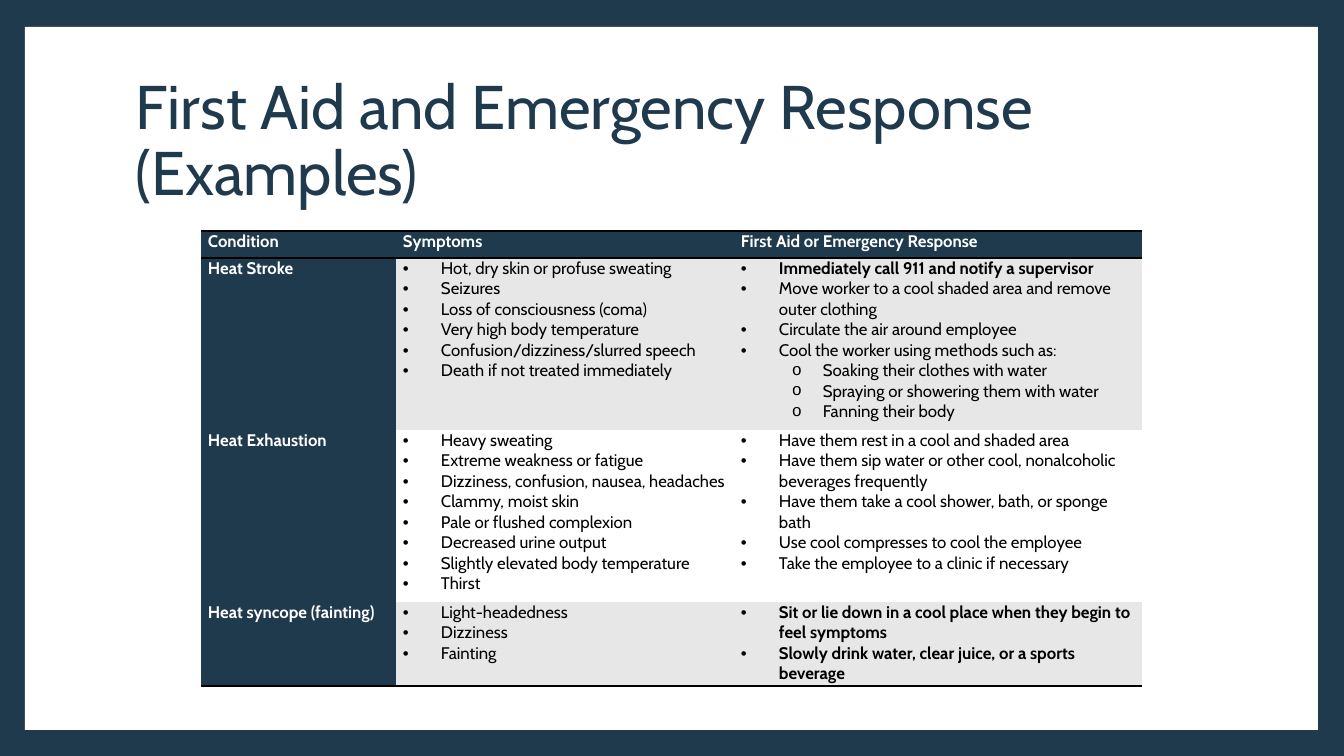
from lxml import etree
from pptx import Presentation
from pptx.dml.color import RGBColor
from pptx.enum.shapes import MSO_SHAPE
from pptx.enum.text import MSO_ANCHOR
from pptx.oxml.ns import qn
from pptx.util import Pt

RECT = MSO_SHAPE.RECTANGLE
MIDDLE, TOP = MSO_ANCHOR.MIDDLE, MSO_ANCHOR.TOP
PX = 914400 / 100.8
NAVY, WHITE, GREY, BLACK = "1F394D", "FFFFFF", "E7E7E7", "000000"
NO_STYLE = "{2D5ABB26-0587-4C30-8999-92F81FD0307C}"
# Bullet sign, its font, left margin and hanging indent in px
BULLETS = [("•", "Arial", 38, -38), ("o", "Courier New", 82, -31)]

HEADS = ["Condition", "Symptoms", "First Aid or Emergency Response"]
# A leading "*" marks a bold line, a leading ">" a line one level down
CASES = [
    ("Heat Stroke",
     ["Hot, dry skin or profuse sweating", "Seizures",
      "Loss of consciousness (coma)", "Very high body temperature",
      "Confusion/dizziness/slurred speech", "Death if not treated immediately"],
     ["*Immediately call 911 and notify a supervisor",
      "Move worker to a cool shaded area and remove outer clothing",
      "Circulate the air around employee",
      "Cool the worker using methods such as:",
      ">Soaking their clothes with water",
      ">Spraying or showering them with water", ">Fanning their body"]),
    ("Heat Exhaustion",
     ["Heavy sweating", "Extreme weakness or fatigue",
      "Dizziness, confusion, nausea, headaches", "Clammy, moist skin",
      "Pale or flushed complexion", "Decreased urine output",
      "Slightly elevated body temperature", "Thirst"],
     ["Have them rest in a cool and shaded area",
      "Have them sip water or other cool, nonalcoholic beverages frequently",
      "Have them take a cool shower, bath, or sponge bath",
      "Use cool compresses to cool the employee",
      "Take the employee to a clinic if necessary"]),
    ("Heat syncope (fainting)",
     ["Light-headedness", "Dizziness", "Fainting"],
     ["*Sit or lie down in a cool place when they begin to feel symptoms",
      "*Slowly drink water, clear juice, or a sports beverage"]),
]


def px(*nums):
    return [round(n * PX) for n in nums]


def write(frame, lines, size=12, color=BLACK, bold=False, bullets=False, space=None):
    """Fill a text frame with one paragraph per line, reading the line marks."""
    for i, line in enumerate(lines):
        para = frame.add_paragraph() if i else frame.paragraphs[0]
        if space:
            para.line_spacing = space
        if bullets:
            para.level = int(line.startswith(">"))
            sign, face, left, hang = BULLETS[para.level]
            props = para._p.get_or_add_pPr()
            for key, num in zip(("marL", "indent"), px(left, hang)):
                props.set(key, str(num))
            etree.SubElement(props, qn("a:buFont"), typeface=face)
            etree.SubElement(props, qn("a:buChar"), char=sign)
        run = para.add_run()
        run.text = line.lstrip("*>")
        font = run.font
        font.name, font.size = "Cabin", Pt(size)
        font.bold = bold or line.startswith("*")
        font.color.rgb = RGBColor.from_string(color)


prs = Presentation()
prs.slide_width, prs.slide_height = px(1344, 756)
slide = prs.slides.add_slide(prs.slide_layouts[6])
back = slide.background.fill
back.solid()
back.fore_color.rgb = RGBColor.from_string(NAVY)

panel = slide.shapes.add_shape(RECT, *px(25, 27, 1293, 703))
panel.shadow.inherit = False
panel.fill.solid()
panel.fill.fore_color.rgb = RGBColor.from_string(WHITE)
panel.line.fill.background()

title = slide.shapes.add_textbox(*px(126, 68, 1089, 149)).text_frame
title.word_wrap = True
title.vertical_anchor = MIDDLE
write(title, ["First Aid and Emergency Response (Examples)"],
      size=44, color=NAVY, space=0.9)

table = slide.shapes.add_table(4, 3, *px(201, 231, 941, 455)).table
table.first_row = table.horz_banding = False
table._tbl.tblPr.find(qn("a:tableStyleId")).text = NO_STYLE
for col, width in zip(table.columns, px(195, 338, 408)):
    col.width = width
for row, height in zip(table.rows, px(27, 172, 172, 84)):
    row.height = height

for r, entry in enumerate([HEADS] + CASES):
    for c, item in enumerate(entry):
        cell = table.cell(r, c)
        head = r == 0 or c == 0
        cell.margin_left, cell.margin_right = px(7, 7)
        cell.margin_top = cell.margin_bottom = 0
        cell.vertical_anchor = TOP
        cell.fill.solid()
        shade = NAVY if head else GREY if r % 2 else WHITE
        cell.fill.fore_color.rgb = RGBColor.from_string(shade)
        if head:
            write(cell.text_frame, [item], color=WHITE, bold=True)
        else:
            write(cell.text_frame, item, bullets=True)
        edges = {0: ["a:lnB", "a:lnT"], len(CASES): ["a:lnB"]}.get(r, [])
        for edge in edges:
            line = etree.Element(qn(edge), w=str(Pt(2)))
            fill = etree.SubElement(line, qn("a:solidFill"))
            etree.SubElement(fill, qn("a:srgbClr"), val=BLACK)
            cell._tc.get_or_add_tcPr().insert(0, line)

prs.save("out.pptx")
